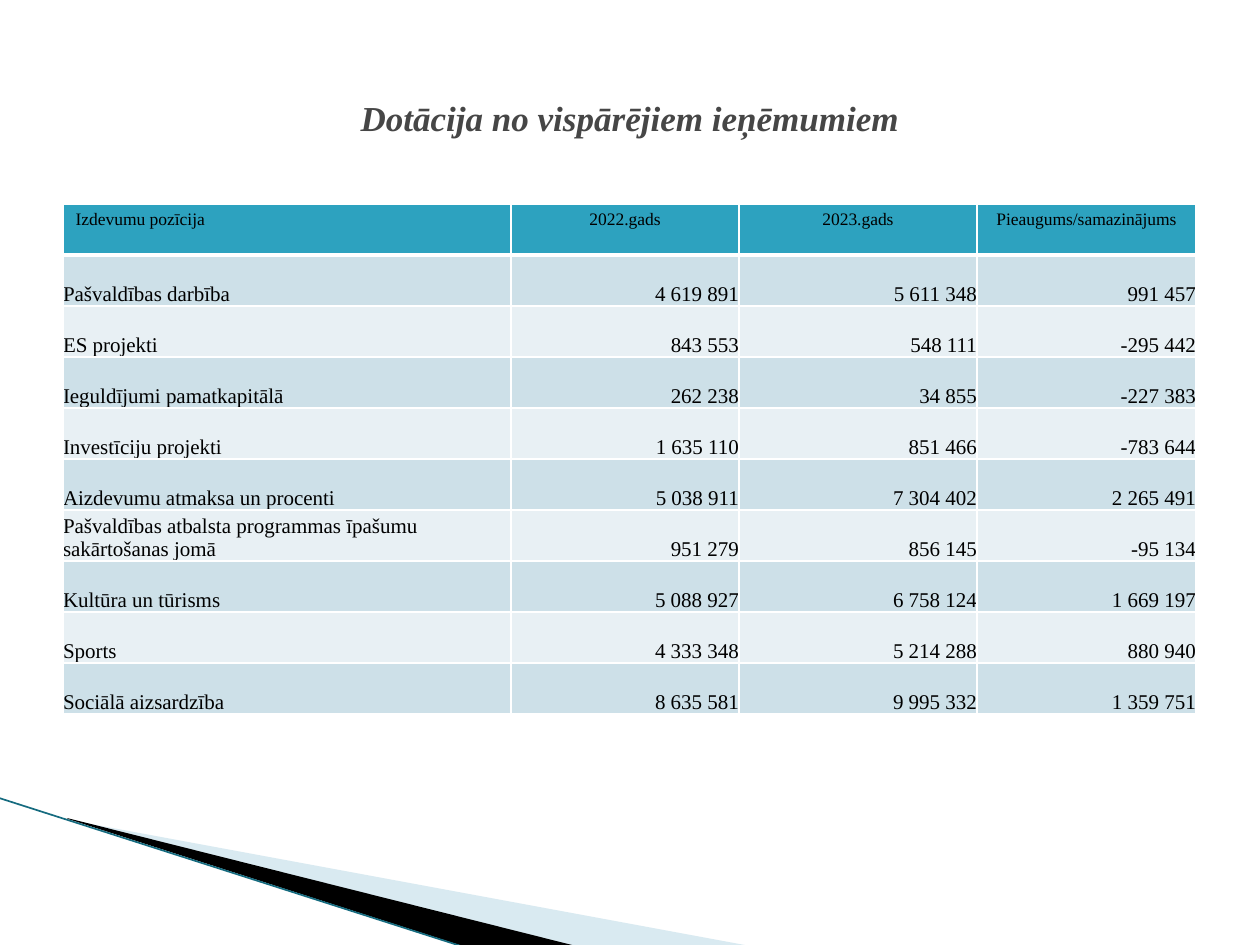
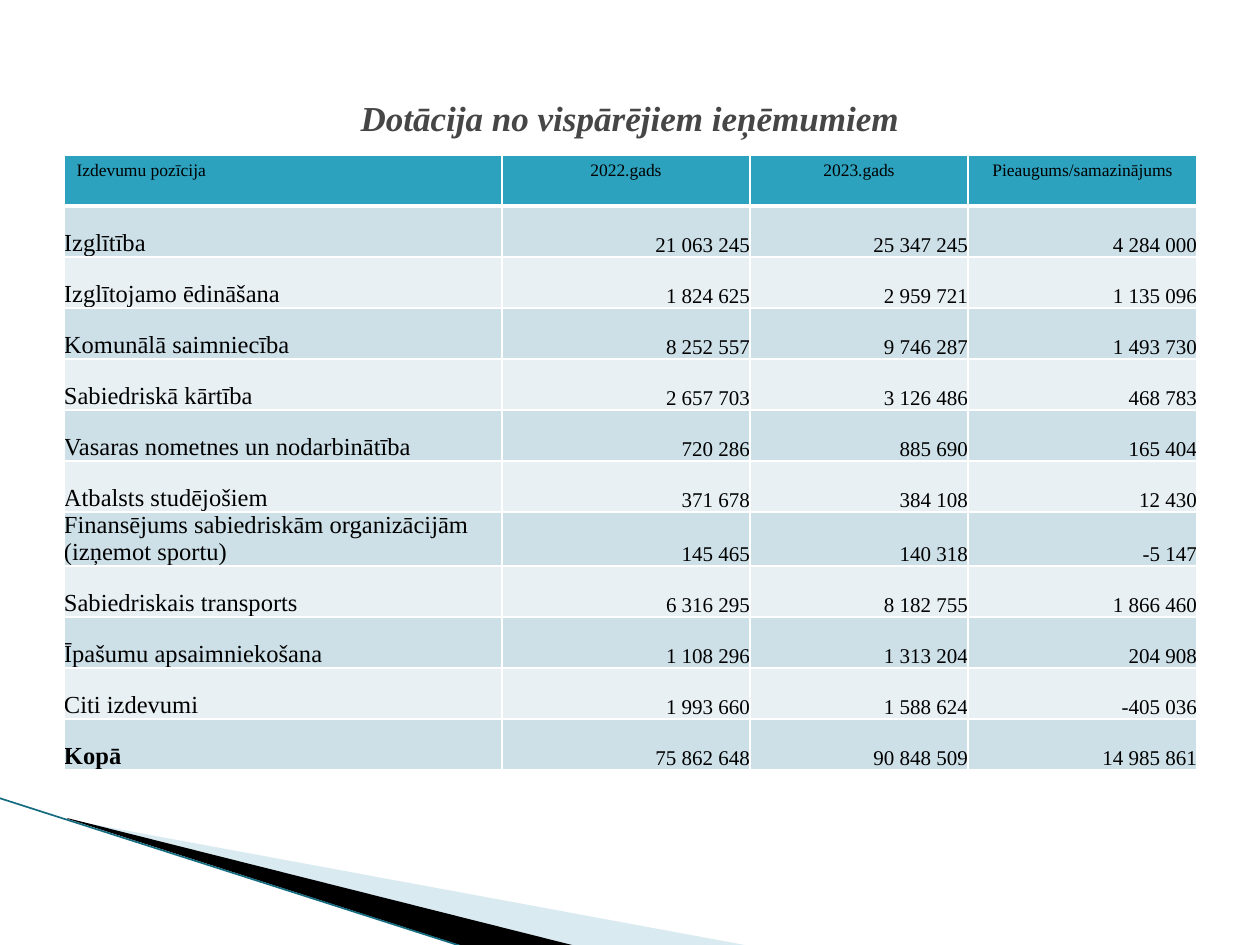
from lxml import etree
from pptx import Presentation
from pptx import util as u
from pptx.dml.color import RGBColor
from pptx.enum import shapes, text
from pptx.oxml import ns

SCALE = 914400 / 126
FONT = "Times New Roman"
TITLE = "Dotācija no vispārējiem ieņēmumiem"
HEADINGS = ("Izdevumu pozīcija", "2022.gads", "2023.gads", "Pieaugums/samazinājums")
ROW_HEIGHT = 51
COLORS = {
    "title": "464646",
    "text": "000000",
    "header": "2DA2BF",
    "odd_row": "CDE0E8",
    "even_row": "E8F0F4",
    "border": "FFFFFF",
    "pale_wedge": "A0CBDC",
    "dark_wedge": "000000",
    "edge": "156B7F",
}

FIRST_BUDGET = [
    ("Pašvaldības darbība", "4 619 891", "5 611 348", "991 457"),
    ("ES projekti", "843 553", "548 111", "-295 442"),
    ("Ieguldījumi pamatkapitālā", "262 238", "34 855", "-227 383"),
    ("Investīciju projekti", "1 635 110", "851 466", "-783 644"),
    ("Aizdevumu atmaksa un procenti", "5 038 911", "7 304 402", "2 265 491"),
    ("Pašvaldības atbalsta programmas īpašumu sakārtošanas jomā",
     "951 279", "856 145", "-95 134"),
    ("Kultūra un tūrisms", "5 088 927", "6 758 124", "1 669 197"),
    ("Sports", "4 333 348", "5 214 288", "880 940"),
    ("Sociālā aizsardzība", "8 635 581", "9 995 332", "1 359 751"),
]
SECOND_BUDGET = [
    ("Izglītība", "21 063 245", "25 347 245", "4 284 000"),
    ("Izglītojamo ēdināšana", "1 824 625", "2 959 721", "1 135 096"),
    ("Komunālā saimniecība", "8 252 557", "9 746 287", "1 493 730"),
    ("Sabiedriskā kārtība", "2 657 703", "3 126 486", "468 783"),
    ("Vasaras nometnes un nodarbinātība", "720 286", "885 690", "165 404"),
    ("Atbalsts studējošiem", "371 678", "384 108", "12 430"),
    ("Finansējums sabiedriskām organizācijām (izņemot sportu)",
     "145 465", "140 318", "-5 147"),
    ("Sabiedriskais transports", "6 316 295", "8 182 755", "1 866 460"),
    ("Īpašumu apsaimniekošana", "1 108 296", "1 313 204", "204 908"),
    ("Citi izdevumi", "1 993 660", "1 588 624", "-405 036"),
    ("Kopā", "75 862 648", "90 848 509", "14 985 861"),
]


def px(length):
    return u.Emu(round(length * SCALE))


def rgb(name):
    return RGBColor.from_string(COLORS[name])


def write(frame, words, size, align, color="text", bold=False, italic=False):
    paragraph = frame.paragraphs[0]
    paragraph.alignment = align
    run = paragraph.add_run()
    run.text = words
    run.font.name = FONT
    run.font.size = u.Pt(size)
    run.font.bold = bold
    run.font.italic = italic
    run.font.color.rgb = rgb(color)


def add_wedge(slide, points, color, opacity=None):
    (start_x, start_y), *others = [(px(x), px(y)) for x, y in points]
    outline = slide.shapes.build_freeform(start_x, start_y)
    outline.add_line_segments(others, close=True)
    wedge = outline.convert_to_shape()
    wedge.shadow.inherit = False
    wedge.fill.solid()
    wedge.fill.fore_color.rgb = rgb(color)
    wedge.line.fill.background()
    if opacity is not None:
        tint = wedge._element.spPr.find(".//" + ns.qn("a:srgbClr"))
        etree.SubElement(tint, ns.qn("a:alpha"), val=str(opacity * 1000))


def add_corner(slide):
    add_wedge(slide, [(69, 820), (750, 946), (575, 946), (69, 819)], "pale_wedge", 40)
    add_wedge(slide, [(67, 818), (576, 946), (469, 948), (68, 819)], "dark_wedge")
    edge = slide.shapes.add_connector(
        shapes.MSO_CONNECTOR.STRAIGHT, px(-1), px(798), px(467), px(948))
    edge.line.color.rgb = rgb("edge")
    edge.line.width = u.Pt(0.95)
    etree.SubElement(edge._element.spPr, ns.qn("a:effectLst"))


def add_title(slide):
    title = slide.shapes.add_textbox(px(63), px(38), px(1134), px(158)).text_frame
    title.word_wrap = True
    title.vertical_anchor = text.MSO_ANCHOR.MIDDLE
    write(title, TITLE, 20, text.PP_ALIGN.CENTER, "title", bold=True, italic=True)


def add_borders(cell, top=1, bottom=1):
    properties = cell._tc.get_or_add_tcPr()
    for side, points in (("L", 1), ("R", 1), ("T", top), ("B", bottom)):
        border = etree.SubElement(properties, ns.qn("a:ln" + side), w=str(u.Pt(points)))
        fill = etree.SubElement(border, ns.qn("a:solidFill"))
        etree.SubElement(fill, ns.qn("a:srgbClr"), val=COLORS["border"])


def fill_cell(cell, color):
    cell.fill.solid()
    cell.fill.fore_color.rgb = rgb(color)


def add_heading(cell, words, align):
    add_borders(cell, bottom=3)
    fill_cell(cell, "header")
    write(cell.text_frame, words, 10, align)


def add_entry(cell, words, row, size, align, bold):
    cell.margin_left = cell.margin_right = cell.margin_top = cell.margin_bottom = 0
    cell.vertical_anchor = text.MSO_ANCHOR.BOTTOM
    add_borders(cell, top=3 if row == 1 else 1)
    fill_cell(cell, "odd_row" if row % 2 else "even_row")
    write(cell.text_frame, words, size, align, bold=bold)


def add_budget(slide, left, top, widths, budget, label_size):
    table = slide.shapes.add_table(
        len(budget) + 1, len(widths), px(left), px(top),
        px(sum(widths)), px(ROW_HEIGHT * (len(budget) + 1))).table
    table.first_row = table.horz_banding = False
    for column, width in zip(table.columns, widths):
        column.width = px(width)
    for line in table.rows:
        line.height = px(ROW_HEIGHT)
    for column, words in enumerate(HEADINGS):
        align = text.PP_ALIGN.CENTER if column else text.PP_ALIGN.LEFT
        add_heading(table.cell(0, column), words, align)
    for row, entries in enumerate(budget, 1):
        for column, words in enumerate(entries):
            align = text.PP_ALIGN.RIGHT if column else text.PP_ALIGN.LEFT
            size = 12 if column else label_size
            add_entry(table.cell(row, column), words, row, size, align, words == "Kopā")


def main():
    deck = Presentation()
    deck.slide_width, deck.slide_height = px(1260), px(945)
    budgets = [
        (63, 204, (448, 228, 238, 219), FIRST_BUDGET, 12),
        (64, 155, (438, 248, 218, 229), SECOND_BUDGET, 14),
    ]
    for budget in budgets:
        slide = deck.slides.add_slide(deck.slide_layouts[6])
        add_corner(slide)
        add_budget(slide, *budget)
        add_title(slide)
    deck.save("out.pptx")


if __name__ == "__main__":
    main()
